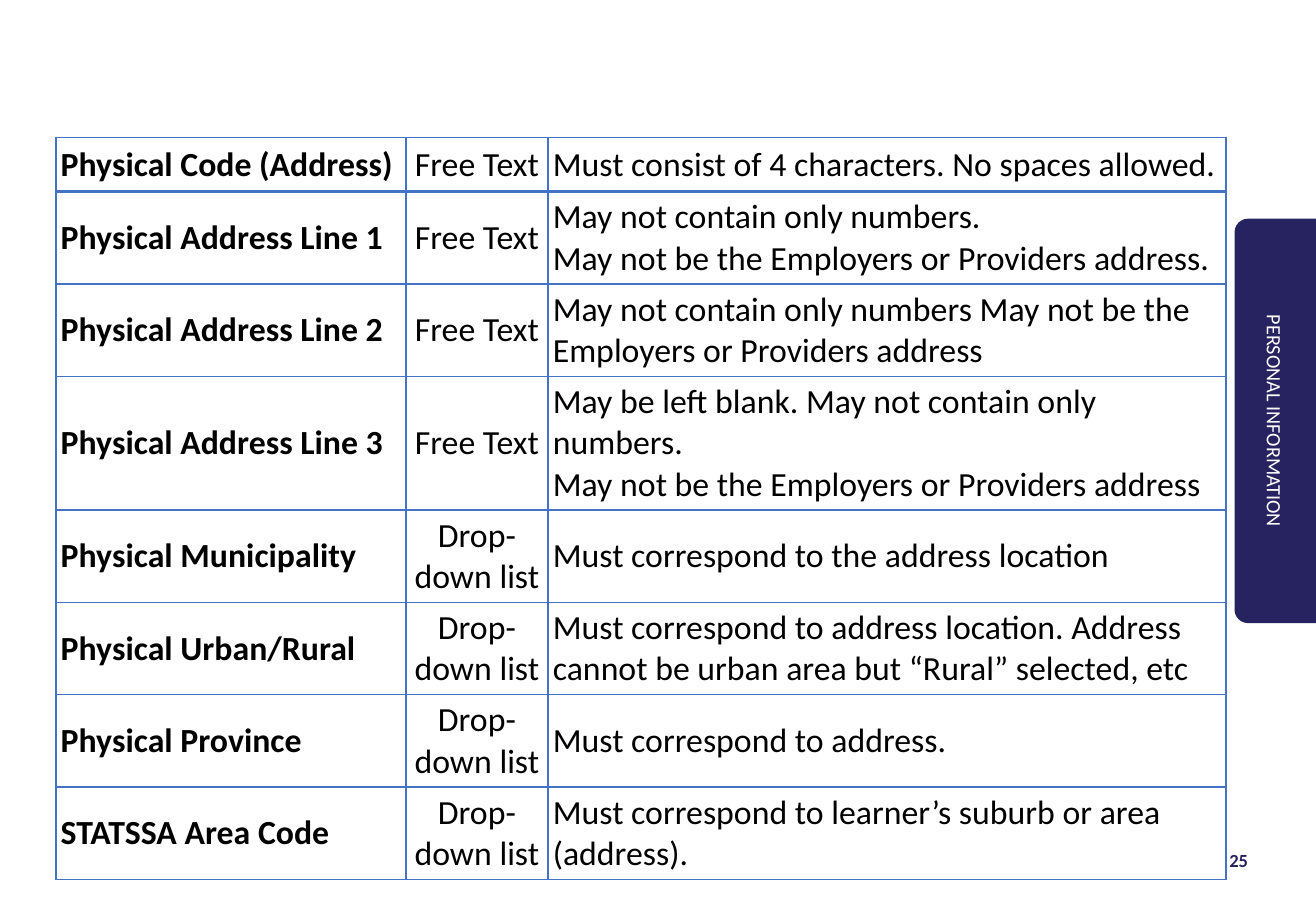
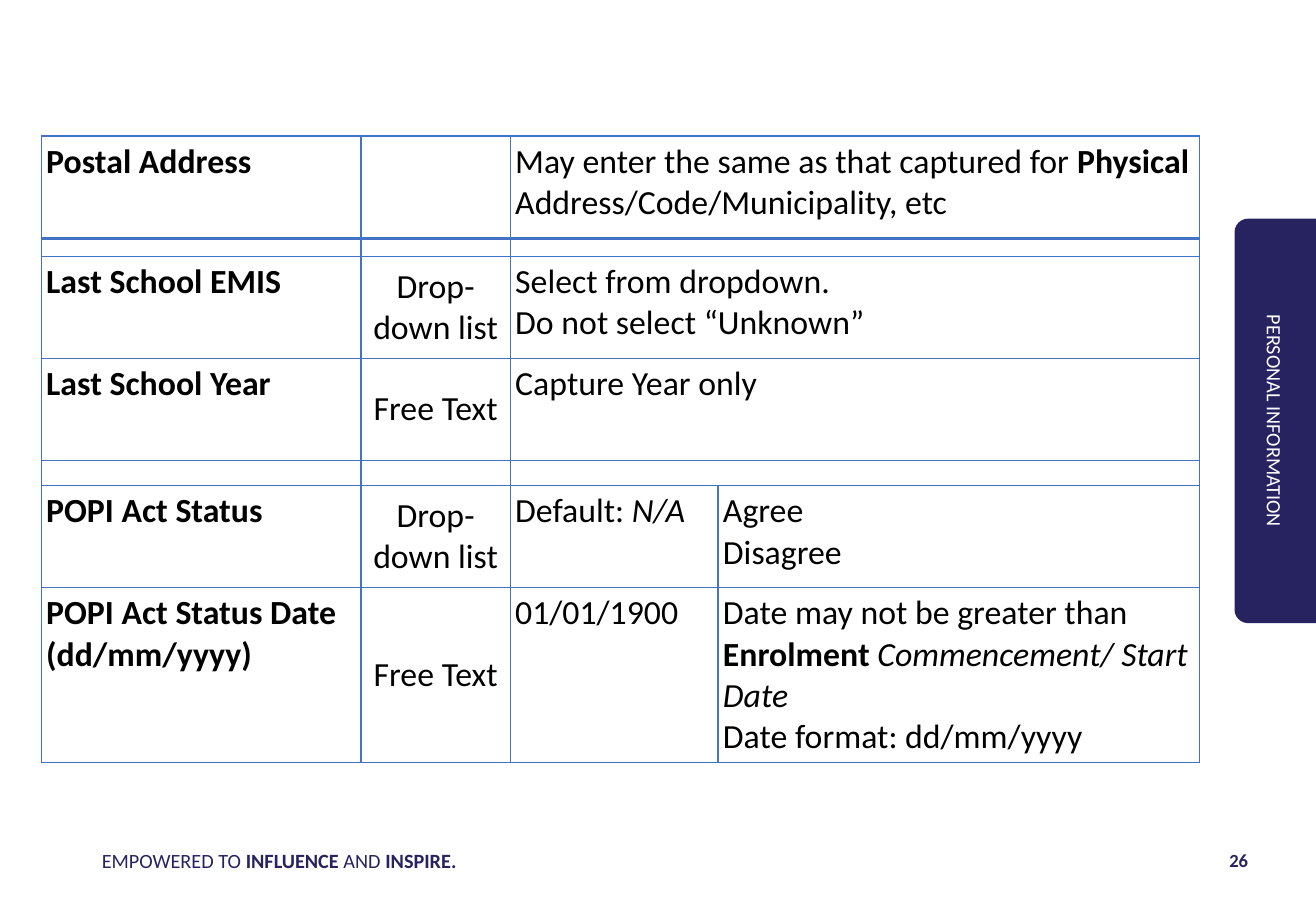
from lxml import etree
from pptx import Presentation
from pptx import util as u
from pptx.dml.color import RGBColor
from pptx.enum import shapes, text
from pptx.oxml.ns import qn

NAVY = RGBColor(0x27, 0x23, 0x61)
BLUE = RGBColor(0x44, 0x72, 0xC4)
WHITE = RGBColor(0xFF, 0xFF, 0xFF)
BLACK = RGBColor(0, 0, 0)
FONT = "Calibri"
LEFT, MID, RIGHT = text.PP_ALIGN.LEFT, text.PP_ALIGN.CENTER, text.PP_ALIGN.RIGHT
TOP, CENTRE = text.MSO_ANCHOR.TOP, text.MSO_ANCHOR.MIDDLE
FREE, DROP = "Free Text", "Drop-down list"


def write(frame, words, size=20, color=BLACK, bold=False, align=LEFT, line=None):
    """Stars switch bold and underscores switch italics."""
    for n, row in enumerate(words.split("\n")):
        para = frame.add_paragraph() if n else frame.paragraphs[0]
        para.alignment = align
        if line:
            para.line_spacing = line
        for b, chunk in enumerate(row.split("*")):
            for i, part in enumerate(chunk.split("_")):
                if part:
                    run = para.add_run()
                    run.text = part
                    font = run.font
                    font.name, font.size = FONT, u.Pt(size)
                    font.bold = bold != bool(b % 2)
                    font.italic = bool(i % 2)
                    font.color.rgb = color
        if not row:
            end = etree.SubElement(para._p, qn("a:endParaRPr"))
            end.set("sz", str(size * 100))


def label(slide, box, words, vert=None, **form):
    frame = slide.shapes.add_textbox(*map(u.Inches, box)).text_frame
    frame.word_wrap = True
    frame.vertical_anchor = CENTRE
    if vert:
        frame._txBody.bodyPr.set("vert", vert)
    write(frame, words, **form)


def edge(cell, base):
    props = cell._tc.get_or_add_tcPr()
    for n, side in enumerate("LRTB"):
        width = base if side == "B" else 1
        line = etree.Element(qn("a:ln" + side), w=str(u.Pt(width)))
        fill = etree.SubElement(line, qn("a:solidFill"))
        etree.SubElement(fill, qn("a:srgbClr"), val=str(BLUE))
        props.insert(n, line)


def fill_cell(cell, words, col, anchor, small, base):
    pad = u.Inches(0 if small else 0.04)
    cell.margin_left = cell.margin_right = pad
    cell.margin_top = cell.margin_bottom = pad
    cell.vertical_anchor = CENTRE if col == 1 else anchor
    cell.fill.background()
    write(cell.text_frame, words, size=8 if small else 20, bold=col == 0,
          align=MID if col == 1 else LEFT)
    edge(cell, base)


def grid(slide, left, top, cols, rows, anchor):
    high = sum(row[0] for row in rows)
    box = map(u.Inches, (left, top, sum(cols), high))
    table = slide.shapes.add_table(len(rows), len(cols), *box).table
    table.first_row = table.horz_banding = False
    for col, width in zip(table.columns, cols):
        col.width = u.Inches(width)
    for r, (height, *cells) in enumerate(rows):
        table.rows[r].height = u.Inches(height)
        if len(cells) < len(cols):
            table.cell(r, len(cells) - 1).merge(table.cell(r, len(cols) - 1))
        for c in range(len(cols)):
            words = cells[c] if c < len(cells) else ""
            fill_cell(table.cell(r, c), words, c, anchor,
                      not any(cells), 1 if r else 2)


def tab(slide, left, top, width, height):
    box = (left + (width - height) / 2, top + (height - width) / 2, height, width)
    shape = slide.shapes.add_shape(
        shapes.MSO_SHAPE.ROUND_2_SAME_RECTANGLE, *map(u.Inches, box))
    shape.rotation = 270
    shape.shadow.inherit = False
    shape.fill.solid()
    shape.fill.fore_color.rgb = NAVY
    shape.line.fill.background()
    label(slide, (left + 0.06, top, 0.52, height), "PERSONAL INFORMATION",
          vert="vert", size=12, color=WHITE, align=MID, line=0.9)


def page(deck, number, motto=None):
    slide = deck.slides.add_slide(deck.slide_layouts[6])
    tab(slide, 10.16, 1.8, 0.67, 3.33)
    if motto:
        label(slide, (0.74, 6.88, 6.5, 0.4), motto, size=12, color=NAVY)
    label(slide, (7.65, 6.88, 2.72, 0.4), number, size=11, color=NAVY,
          bold=True, align=RIGHT)
    return slide


PLACE = [
    (0.45, "Physical Code (Address)", FREE,
     "Must consist of 4 characters. No spaces allowed."),
    (0.76, "Physical Address Line 1", FREE,
     "May not contain only numbers.\nMay not be the Employers or Providers address."),
    (0.76, "Physical Address Line 2", FREE,
     "May not contain only numbers May not be the Employers or Providers address"),
    (1.1, "Physical Address Line 3", FREE,
     "May be left blank. May not contain only numbers.\n"
     "May not be the Employers or Providers address"),
    (0.76, "Physical Municipality", DROP, "Must correspond to the address location"),
    (0.76, "Physical Urban/Rural", DROP,
     "Must correspond to address location. Address cannot be urban area "
     "but “Rural” selected, etc"),
    (0.76, "Physical Province", DROP, "Must correspond to address."),
    (0.76, "STATSSA Area Code", DROP,
     "Must correspond to learner’s suburb or area (address)."),
]
STATUS = [
    (0.84, "Postal Address", "",
     "May enter the same as that captured for *Physical* "
     "Address/Code/Municipality, etc"),
    (0.15, "", "", ""),
    (0.84, "Last School EMIS", DROP, "Select from dropdown.\nDo not select “Unknown”"),
    (0.84, "Last School Year", FREE, "Capture Year only"),
    (0.21, "", "", ""),
    (0.84, "POPI Act Status", DROP, "Default: _N/A_", "Agree\nDisagree"),
    (1.44, "POPI Act Status Date (dd/mm/yyyy)", FREE, "01/01/1900",
     "Date may not be greater than *Enrolment *_Commencement/ Start Date_\n"
     "Date format: dd/mm/yyyy"),
]


def main():
    deck = Presentation()
    deck.slide_width, deck.slide_height = u.Inches(10.83), u.Inches(7.5)
    grid(page(deck, "25"), 0.46, 1.13, (2.88, 1.17, 5.58), PLACE, CENTRE)
    last = page(deck, "26", "EMPOWERED TO *INFLUENCE* AND *INSPIRE.*")
    grid(last, 0.34, 1.12, (2.63, 1.23, 1.71, 3.96), STATUS, TOP)
    deck.save("out.pptx")


if __name__ == "__main__":
    main()
